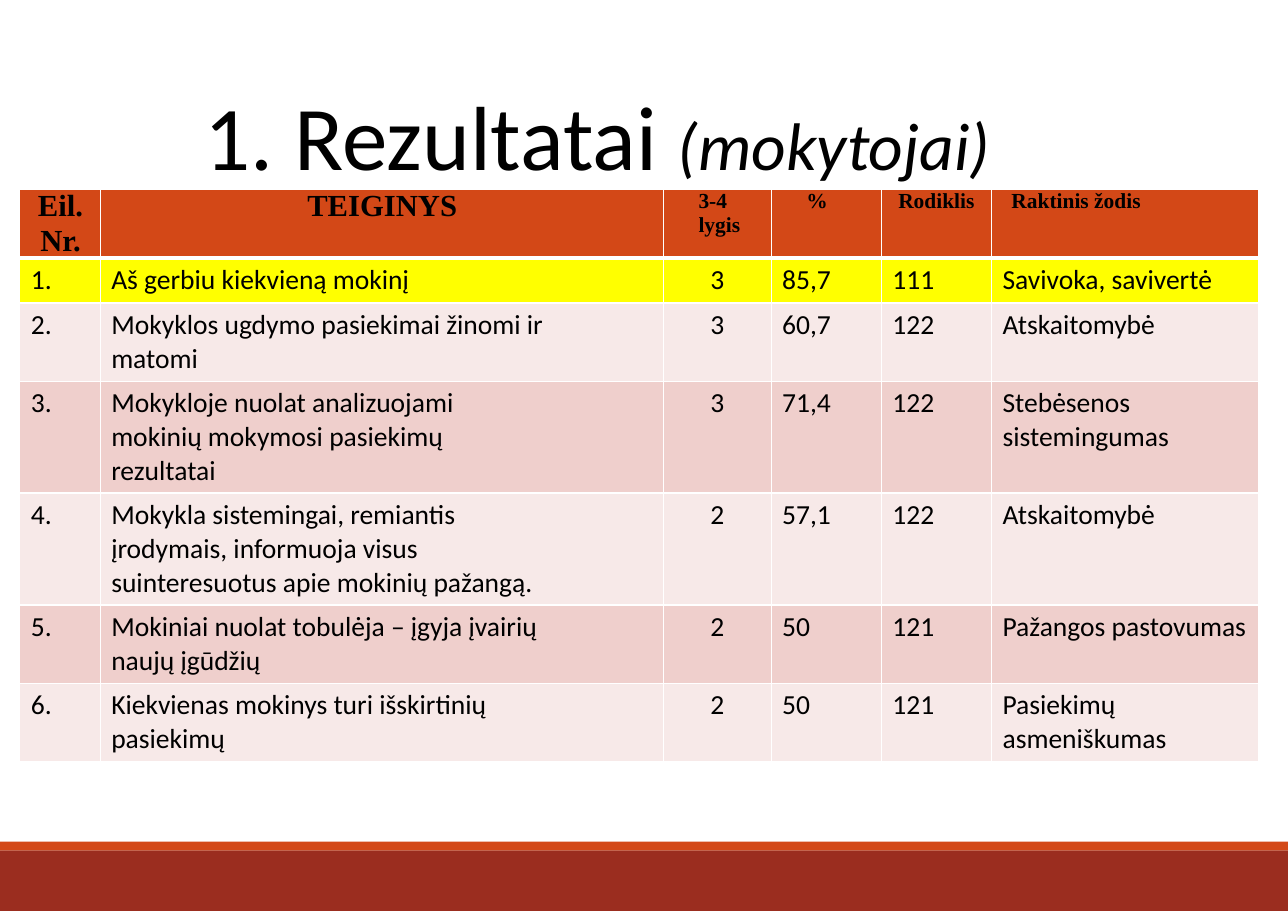
from dataclasses import dataclass

from lxml import etree
from pptx import Presentation
from pptx.dml.color import RGBColor
from pptx.enum.shapes import MSO_SHAPE
from pptx.enum.text import MSO_ANCHOR, MSO_AUTO_SIZE, PP_ALIGN
from pptx.oxml.ns import qn
from pptx.util import Inches, Pt

RECTANGLE = MSO_SHAPE.RECTANGLE
TOP = MSO_ANCHOR.TOP
NO_AUTOFIT = MSO_AUTO_SIZE.NONE
LEFT, CENTER = PP_ALIGN.LEFT, PP_ALIGN.CENTER
TITLE_ONLY_LAYOUT = 5

SLIDE_WIDTH, SLIDE_HEIGHT = 11.69, 8.27


@dataclass(frozen=True)
class Theme:
    body_font: str = "Calibri"
    header_font: str = "Times New Roman"
    text: str = "000000"
    accent: str = "D34817"
    footer: str = "9B2D1F"
    highlight: str = "FFFF00"
    light_row: str = "F7E9E8"
    dark_row: str = "EFCFCC"
    border: str = "FFFFFF"
    title_size: float = 59.5
    subtitle_size: float = 44
    header_size: float = 20
    small_header_size: float = 14
    body_size: float = 18
    border_width: float = 1
    header_rule_width: float = 3


# Table content
COLUMN_WIDTHS = [0.73, 5.11, 0.98, 1, 1, 2.42]
ROW_HEIGHT = 0.41  # minimum; rows grow with their text
LEVEL_COLUMN = 2

# Heading, alignment, left indent
HEADERS = [
    ("Eil.\nNr.", CENTER, 0.01),
    ("TEIGINYS", CENTER, 0.01),
    ("3-4 lygis", LEFT, 0.32),
    ("%", LEFT, 0.32),
    ("Rodiklis", CENTER, 0),
    ("Raktinis žodis", LEFT, 0.18),
]
STATEMENTS = [
    ("1.", "Aš gerbiu kiekvieną mokinį", "3", "85,7", "111", "Savivoka, savivertė"),
    ("2.", "Mokyklos ugdymo pasiekimai žinomi ir\nmatomi",
     "3", "60,7", "122", "Atskaitomybė"),
    ("3.", "Mokykloje nuolat analizuojami\nmokinių mokymosi pasiekimų\nrezultatai",
     "3", "71,4", "122", "Stebėsenos\nsistemingumas"),
    ("4.", "Mokykla sistemingai, remiantis\nįrodymais, informuoja visus\n"
     "suinteresuotus apie mokinių pažangą.", "2", "57,1", "122", "Atskaitomybė"),
    ("5.", "Mokiniai nuolat tobulėja – įgyja įvairių\nnaujų įgūdžių",
     "2", "50", "121", "Pažangos pastovumas"),
    ("6.", "Kiekvienas mokinys turi išskirtinių\npasiekimų",
     "2", "50", "121", "Pasiekimų asmeniškumas"),
]


class SlideBuilder:
    def __init__(self, slide, theme):
        self.slide = slide
        self.theme = theme

    def band(self, top, height, color):
        band = self.slide.shapes.add_shape(
            RECTANGLE, 0, Inches(top), Inches(SLIDE_WIDTH), Inches(height))
        band.shadow.inherit = False
        band.fill.solid()
        band.fill.fore_color.rgb = RGBColor.from_string(color)
        band.line.fill.background()

    def style_run(self, run, font, size, bold=False, italic=False):
        run.font.name = font
        run.font.size = Pt(size)
        run.font.bold = bold
        run.font.italic = italic
        run.font.color.rgb = RGBColor.from_string(self.theme.text)

    def title(self, heading, audience, left, top, width, height):
        theme = self.theme
        title = self.slide.shapes.title
        title.left, title.top = Inches(left), Inches(top)
        title.width, title.height = Inches(width), Inches(height)
        frame = title.text_frame
        frame.word_wrap = True
        frame.auto_size = NO_AUTOFIT
        frame.vertical_anchor = TOP
        frame.margin_top = Inches(0.08)
        paragraph = frame.paragraphs[0]
        paragraph.text = heading
        paragraph.alignment = LEFT
        self.style_run(paragraph.runs[0], theme.body_font, theme.title_size)
        audience_run = paragraph.add_run()
        audience_run.text = audience
        self.style_run(audience_run, theme.body_font, theme.subtitle_size, italic=True)

    def cell_borders(self, cell, top, bottom):
        properties = cell._tc.get_or_add_tcPr()
        side = self.theme.border_width
        for tag, width in (("lnL", side), ("lnR", side), ("lnT", top), ("lnB", bottom)):
            line = etree.SubElement(properties, qn(f"a:{tag}"), w=str(Pt(width)))
            fill = etree.SubElement(line, qn("a:solidFill"))
            etree.SubElement(fill, qn("a:srgbClr"), val=self.theme.border)

    def cell(self, cell, text, fill, font, size, alignment=LEFT, bold=False):
        cell.fill.solid()
        cell.fill.fore_color.rgb = RGBColor.from_string(fill)
        cell.text_frame.text = text
        for paragraph in cell.text_frame.paragraphs:
            paragraph.alignment = alignment
            for run in paragraph.runs:
                self.style_run(run, font, size, bold)

    def header_cell(self, cell, heading, size, alignment, indent):
        theme = self.theme
        self.cell_borders(cell, theme.border_width, theme.header_rule_width)
        self.cell(cell, heading, theme.accent, theme.header_font, size, alignment, True)
        cell.margin_left = cell.margin_right = cell.margin_top = cell.margin_bottom = 0
        for paragraph in cell.text_frame.paragraphs:
            paragraph.space_before = Pt(0.2)
            paragraph._p.get_or_add_pPr().set("marL", str(Inches(indent)))

    def results_table(self, left, top):
        theme = self.theme
        row_count = len(STATEMENTS) + 1
        table = self.slide.shapes.add_table(
            row_count, len(HEADERS), Inches(left), Inches(top),
            Inches(sum(COLUMN_WIDTHS)), Inches(ROW_HEIGHT * row_count)).table
        table.horz_banding = False
        for column, width in zip(table.columns, COLUMN_WIDTHS):
            column.width = Inches(width)
        for row in table.rows:
            row.height = Inches(ROW_HEIGHT)

        # Header row: the first two headings are larger
        for column, (heading, alignment, indent) in enumerate(HEADERS):
            size = theme.header_size if column < LEVEL_COLUMN else theme.small_header_size
            self.header_cell(table.cell(0, column), heading, size, alignment, indent)

        # Statement rows: highlighted first, then alternating
        for row, statement in enumerate(STATEMENTS, start=1):
            fill = theme.dark_row if row % 2 else theme.light_row
            top_width = theme.border_width
            if row == 1:
                fill, top_width = theme.highlight, theme.header_rule_width
            for column, text in enumerate(statement):
                cell = table.cell(row, column)
                alignment = CENTER if column == LEVEL_COLUMN else LEFT
                self.cell_borders(cell, top_width, theme.border_width)
                self.cell(cell, text, fill, theme.body_font, theme.body_size, alignment)


def main():
    presentation = Presentation()
    presentation.slide_width = Inches(SLIDE_WIDTH)
    presentation.slide_height = Inches(SLIDE_HEIGHT)
    layout = presentation.slide_layouts[TITLE_ONLY_LAYOUT]
    theme = Theme()
    builder = SlideBuilder(presentation.slides.add_slide(layout), theme)

    # Footer bands
    builder.band(7.72, 0.55, theme.footer)
    builder.band(7.64, 0.08, theme.accent)

    # Title and results
    builder.title("1. Rezultatai ", "(mokytojai)", 1.76, 0.64, 8.42, 2.1)
    builder.results_table(0.18, 1.72)

    presentation.save("out.pptx")


if __name__ == "__main__":
    main()
